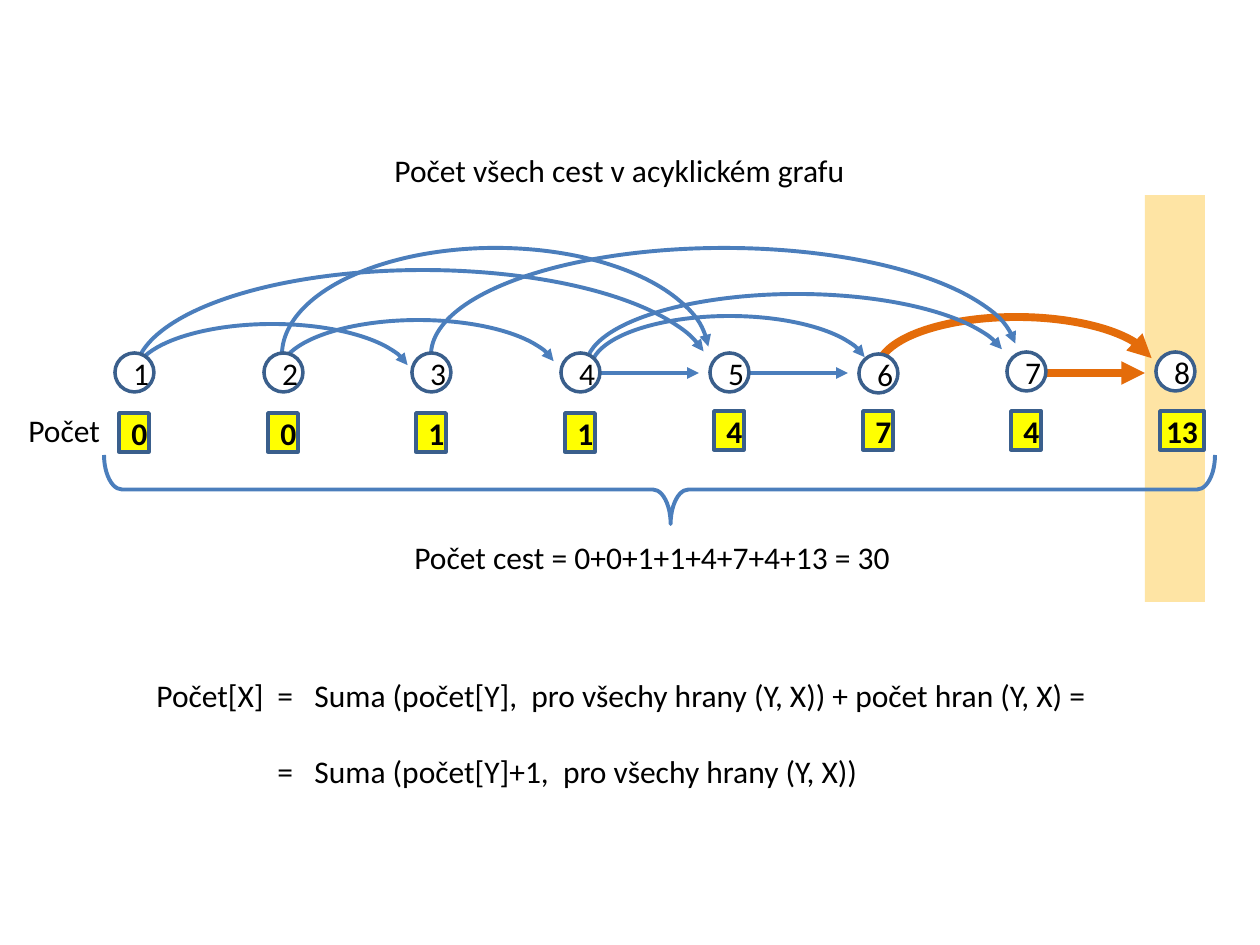
from lxml import etree
from pptx import Presentation
from pptx.dml.color import RGBColor
from pptx.enum.shapes import MSO_CONNECTOR, MSO_SHAPE
from pptx.enum.text import MSO_ANCHOR, MSO_AUTO_SIZE, PP_ALIGN
from pptx.oxml.ns import qn
from pptx.util import Pt

ARC, BRACE = MSO_SHAPE.ARC, MSO_SHAPE.RIGHT_BRACE
OVAL, RECTANGLE = MSO_SHAPE.OVAL, MSO_SHAPE.RECTANGLE
STRAIGHT = MSO_CONNECTOR.STRAIGHT
MIDDLE, CENTER, LEFT = MSO_ANCHOR.MIDDLE, PP_ALIGN.CENTER, PP_ALIGN.LEFT
FIT_SHAPE = MSO_AUTO_SIZE.SHAPE_TO_FIT_TEXT

EMU_PER_PX = 914400 / 126
FONT, FONT_SIZE = "Calibri", 18
COLORS = {
    "band": "FEE4A4", "edge": "4B7EBC", "highlight": "E46C0A",
    "outline": "3A5F8C", "node": "FFFFFF", "count": "FFFF00", "text": "000000",
}
FIRST_NODE_LEFT, LAST_NODE_LEFT, NODE_SIZE = 115, 1156, 39
NODE_TOPS = [353, 353, 353, 353, 353, 354, 352, 352]
COUNTS = [0, 0, 1, 1, 4, 7, 4, 13]
COUNT_TOPS = [413] * 4 + [411] * 4
LOW_END, HIGH_END = 213.11, 214.65
ARCS = [
    (134, 324, 277, 105, LOW_END, "edge", 2.25),
    (135, 270, 576, 210, LOW_END, "edge", 2.25),
    (282, 248, 427, 214, HIGH_END, "edge", 2.25),
    (878, 317, 277, 105, LOW_END, "highlight", 4.5),
    (591, 316, 277, 105, LOW_END, "edge", 2.25),
    (431, 248, 586, 214, HIGH_END, "edge", 2.25),
    (586, 294, 422, 145, LOW_END, "edge", 2.25),
    (280, 320, 277, 105, LOW_END, "edge", 2.25),
]
ARROWS = [
    (600, 699, "edge", 2.25),
    (748, 848, "edge", 2.25),
    (1047, 1145, "highlight", 4.5),
]
ARROW_Y = 373
LABELS = [
    (402, 532, 507, "Počet cest = 0+0+1+1+4+7+4+13 = 30"),
    (382, 145, 484, "Počet všech cest v acyklickém grafu"),
    (16, 405, 98, "Počet"),
]
FORMULA = [
    "Počet[X]\t=\tSuma (počet[Y],  pro všechy hrany (Y, X)) + počet hran (Y, X) =",
    "\t=\tSuma (počet[Y]+1,  pro všechy hrany (Y, X))",
]
FORMULA_TABS = [121, 158]


def px(length):
    """Turn pixels into EMU."""
    return round(length * EMU_PER_PX)


def color(name):
    """Look up a named colour."""
    return RGBColor.from_string(COLORS[name])


def style_line(line, name, width):
    """Set the colour and width of a line."""
    line.color.rgb = color(name)
    line.width = Pt(width)


def add_arrowhead(shape):
    """Put a triangle at the end of a shape's line."""
    line = shape._element.spPr.find(qn("a:ln"))
    etree.SubElement(line, qn("a:tailEnd"), type="triangle")


def style_paragraph(paragraph, alignment, bold=False):
    """Give a paragraph the slide's font."""
    paragraph.alignment = alignment
    for run in paragraph.runs:
        run.font.name = FONT
        run.font.size = Pt(FONT_SIZE)
        run.font.bold = bold
        run.font.color.rgb = color("text")


def add_shape(slide, kind, left, top, width, height, fill=None):
    """Add a shape without shadow or line."""
    shape = slide.shapes.add_shape(kind, px(left), px(top), px(width), px(height))
    shape.shadow.inherit = False
    if fill:
        shape.fill.solid()
        shape.fill.fore_color.rgb = color(fill)
    else:
        shape.fill.background()
    shape.line.fill.background()
    return shape


def add_arc(slide, left, top, width, height, end, name, weight):
    """Add a curved edge with an arrowhead."""
    arc = add_shape(slide, ARC, left, top, width, height)
    arc.adjustments[0], arc.adjustments[1] = 108.25, end
    style_line(arc.line, name, weight)
    add_arrowhead(arc)


def add_arrow(slide, start, end, name, weight):
    """Add a straight edge with an arrowhead."""
    arrow = slide.shapes.add_connector(
        STRAIGHT, px(start), px(ARROW_Y), px(end), px(ARROW_Y))
    style_line(arrow.line, name, weight)
    add_arrowhead(arrow)
    etree.SubElement(arrow._element.spPr, qn("a:effectLst"))


def add_marker(slide, kind, left, top, width, text, fill, bold):
    """Add an outlined shape holding a number."""
    marker = add_shape(slide, kind, left, top, width, NODE_SIZE, fill)
    style_line(marker.line, "outline", 2)
    frame = marker.text_frame
    frame.text = text
    frame.vertical_anchor = MIDDLE
    style_paragraph(frame.paragraphs[0], CENTER, bold)
    return marker


def add_vertex(slide, index):
    """Add a numbered node and the count below it."""
    span = LAST_NODE_LEFT - FIRST_NODE_LEFT
    left = FIRST_NODE_LEFT + round(span * index / (len(COUNTS) - 1))
    add_marker(slide, OVAL, left, NODE_TOPS[index], NODE_SIZE,
               str(index + 1), "node", False)
    wide = COUNTS[index] > 9
    count = add_marker(slide, RECTANGLE, left + 4, COUNT_TOPS[index],
                       44 if wide else 30, str(COUNTS[index]), "count", True)
    if wide:
        frame = count.text_frame
        frame.word_wrap = False
        frame.margin_left = frame.margin_right = 0
        frame.margin_top = frame.margin_bottom = 0


def add_brace(slide):
    """Add the brace under all counts."""
    brace = add_shape(slide, BRACE, 625, -66, 69, 1111)
    brace.rotation = 90
    brace.adjustments[0], brace.adjustments[1] = 0.26, 0.49
    style_line(brace.line, "edge", 2.25)


def add_label(slide, left, top, width, text):
    """Add a one-line text box."""
    label = slide.shapes.add_textbox(px(left), px(top), px(width), px(50))
    frame = label.text_frame
    frame.word_wrap = False
    frame.auto_size = FIT_SHAPE
    frame.text = text
    style_paragraph(frame.paragraphs[0], LEFT)


def add_formula(slide):
    """Add the two formula lines aligned on tab stops."""
    box = slide.shapes.add_textbox(px(144), px(670), px(992), px(127))
    frame = box.text_frame
    frame.word_wrap = True
    frame.auto_size = FIT_SHAPE
    frame.text = "\n".join(FORMULA)
    for paragraph in frame.paragraphs:
        style_paragraph(paragraph, LEFT)
    frame.paragraphs[1].space_before = Pt(22)
    for paragraph in frame.paragraphs:
        properties = paragraph._p.get_or_add_pPr()
        tabs = etree.SubElement(properties, qn("a:tabLst"))
        for position in FORMULA_TABS:
            etree.SubElement(tabs, qn("a:tab"), pos=str(px(position)), algn="l")


def main():
    """Build the slide and save it."""
    presentation = Presentation()
    presentation.slide_width, presentation.slide_height = px(1260), px(945)
    slide = presentation.slides.add_slide(presentation.slide_layouts[6])
    add_shape(slide, RECTANGLE, 1145, 195, 60, 407, "band")
    for arc in ARCS:
        add_arc(slide, *arc)
    for arrow in ARROWS:
        add_arrow(slide, *arrow)
    for index in range(len(COUNTS)):
        add_vertex(slide, index)
    add_brace(slide)
    for label in LABELS:
        add_label(slide, *label)
    add_formula(slide)
    presentation.save("out.pptx")


if __name__ == "__main__":
    main()
